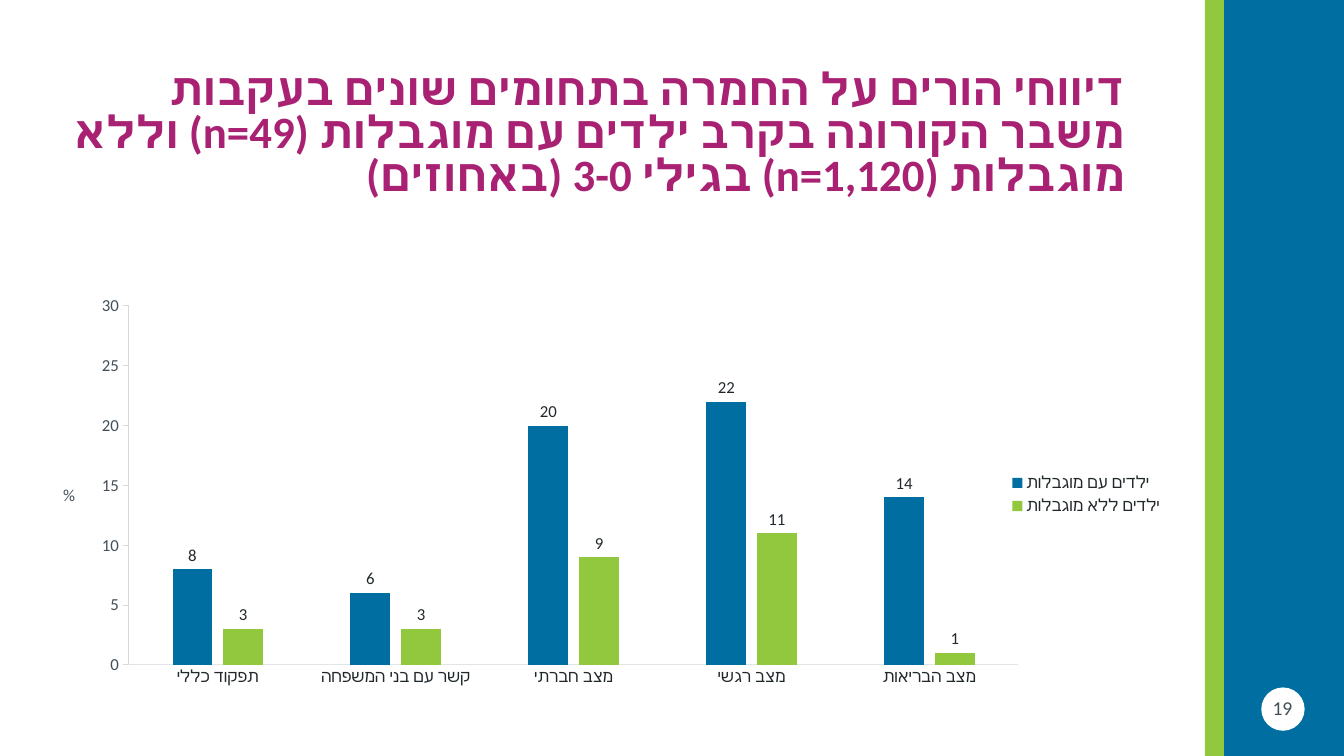
from dataclasses import dataclass

from lxml.etree import SubElement
from pptx import Presentation
from pptx.chart.data import CategoryChartData
from pptx.dml.color import RGBColor
from pptx.enum.chart import XL_CHART_TYPE, XL_LABEL_POSITION, XL_LEGEND_POSITION, XL_TICK_MARK
from pptx.enum.shapes import MSO_SHAPE
from pptx.enum.text import MSO_ANCHOR, MSO_AUTO_SIZE, PP_ALIGN
from pptx.oxml import parse_xml
from pptx.oxml.ns import nsdecls, qn
from pptx.util import Inches, Pt


@dataclass(frozen=True)
class Theme:
    font: str = "Calibri"
    blue: str = "006EA0"
    green: str = "92C83E"
    white: str = "FFFFFF"
    magenta: str = "A82172"
    grey: str = "424F58"
    dark: str = "21282C"
    category_line: str = "E0E5E8"
    value_line: str = "D9D9D9"
    title_size: int = 32
    number_size: int = 14
    chart_size: int = 12


theme = Theme()


def style_font(font, size, color, bold=False):
    font.name = theme.font
    font.size = Pt(size)
    font.bold = bold
    font.color.rgb = RGBColor.from_string(color)


def place_by_hand(element, successors, **fractions):
    """Give a chart part a manual layout, in fractions of the chart's size."""
    for old in element.findall(qn("c:layout")):
        element.remove(old)
    layout = parse_xml(f"<c:layout {nsdecls('c')}><c:manualLayout/></c:layout>")
    for name, value in fractions.items():
        SubElement(layout[0], qn(f"c:{name}")).set("val", str(value))
    element.insert_element_before(layout, *successors)


deck = Presentation()
deck.slide_width, deck.slide_height = Inches(13.33), Inches(7.5)
page = deck.slides.add_slide(deck.slide_layouts[5])

# Side band with the page number
for kind, left, top, width, height, color in (
    (MSO_SHAPE.RECTANGLE, 11.95, 0, 0.2, 7.5, theme.green),
    (MSO_SHAPE.RECTANGLE, 12.14, 0, 1.19, 7.5, theme.blue),
    (MSO_SHAPE.OVAL, 12.51, 6.82, 0.43, 0.43, theme.white),
):
    shape = page.shapes.add_shape(kind, Inches(left), Inches(top), Inches(width), Inches(height))
    shape.shadow.inherit = False
    shape.fill.solid()
    shape.fill.fore_color.rgb = RGBColor.from_string(color)
    shape.line.fill.background()

number_box = page.shapes.add_textbox(Inches(12.43), Inches(6.86), Inches(0.58), Inches(0.4))
number_box.text_frame.word_wrap = True
title = page.shapes.title
title.left, title.top, title.width, title.height = Inches(0.41), Inches(0.62), Inches(10.85), Inches(1.45)
title.text_frame.auto_size = MSO_AUTO_SIZE.NONE
title.text_frame.vertical_anchor = MSO_ANCHOR.MIDDLE

for box, text, align, size, color, bold in (
    (number_box, "19", PP_ALIGN.CENTER, theme.number_size, theme.grey, False),
    (title, "דיווחי הורים על החמרה בתחומים שונים בעקבות משבר הקורונה בקרב ילדים עם מוגבלות (n=49) "
            "וללא מוגבלות (n=1,120) בגילי 3-0 (באחוזים)",
     PP_ALIGN.RIGHT, theme.title_size, theme.magenta, True),
):
    box.text_frame.text = text
    para = box.text_frame.paragraphs[0]
    para.alignment = align
    style_font(para.font, size, color, bold)
    properties = para._p.get_or_add_pPr()
    properties.set("rtl", "1")
    SubElement(properties.find(qn("a:defRPr")), qn("a:cs")).set("typeface", theme.font)
title.text_frame.paragraphs[0].line_spacing = 0.8

# Chart
data = CategoryChartData(number_format="General")
data.categories = ["תפקוד כללי", "קשר עם בני המשפחה", "מצב חברתי", "מצב רגשי", "מצב הבריאות"]
data.add_series("ילדים עם מוגבלות", (8, 6, 20, 22, 14))
data.add_series("ילדים ללא מוגבלות", (3, 3, 9, 11, 1))
chart = page.shapes.add_chart(
    XL_CHART_TYPE.COLUMN_CLUSTERED, Inches(0.41), Inches(2.85), Inches(11.58), Inches(4.03), data
).chart
style_font(chart.font, theme.chart_size, theme.grey)
chart.has_title = False

plot = chart.plots[0]
plot.gap_width, plot.overlap = 219, -27
plot.vary_by_categories = False
for series, color in zip(plot.series, (theme.blue, theme.green)):
    series.format.fill.solid()
    series.format.fill.fore_color.rgb = RGBColor.from_string(color)
    series.invert_if_negative = False
    labels = series.data_labels
    labels.show_value = True
    labels.position = XL_LABEL_POSITION.OUTSIDE_END
    style_font(labels.font, theme.chart_size, theme.dark)

for axis, tick, text_color, line_color in (
    (chart.category_axis, XL_TICK_MARK.NONE, theme.dark, theme.category_line),
    (chart.value_axis, XL_TICK_MARK.OUTSIDE, theme.grey, theme.value_line),
):
    axis.has_major_gridlines = False
    axis.major_tick_mark, axis.minor_tick_mark = tick, XL_TICK_MARK.NONE
    axis.format.line.color.rgb = RGBColor.from_string(line_color)
    axis.format.line.width = Pt(0.75)
    style_font(axis.tick_labels.font, theme.chart_size, text_color)

value_axis = chart.value_axis
value_axis.minimum_scale, value_axis.maximum_scale, value_axis.major_unit = 0, 30, 5
axis_title = value_axis.axis_title
axis_title.text_frame.text = "%"
style_font(axis_title.text_frame.paragraphs[0].font, theme.chart_size, theme.grey)
upright = axis_title.text_frame._txBody.find(qn("a:bodyPr"))
upright.set("rot", "0")
upright.set("vert", "horz")

chart.has_legend = True
chart.legend.position = XL_LEGEND_POSITION.RIGHT
chart.legend.include_in_layout = False
style_font(chart.legend.font, theme.chart_size, theme.dark)

edge = {"xMode": "edge", "yMode": "edge"}
place_by_hand(chart._chartSpace.chart.plotArea, ("c:barChart",),
              layoutTarget="inner", **edge, x=0.075, y=0.046, w=0.762, h=0.884)
place_by_hand(chart.legend._element, ("c:overlay", "c:spPr", "c:txPr"),
              **edge, x=0.825, y=0.445, w=0.14, h=0.13)
place_by_hand(axis_title._element, ("c:overlay", "c:spPr", "c:txPr"), **edge, x=0.016, y=0.475)

deck.save("out.pptx")
